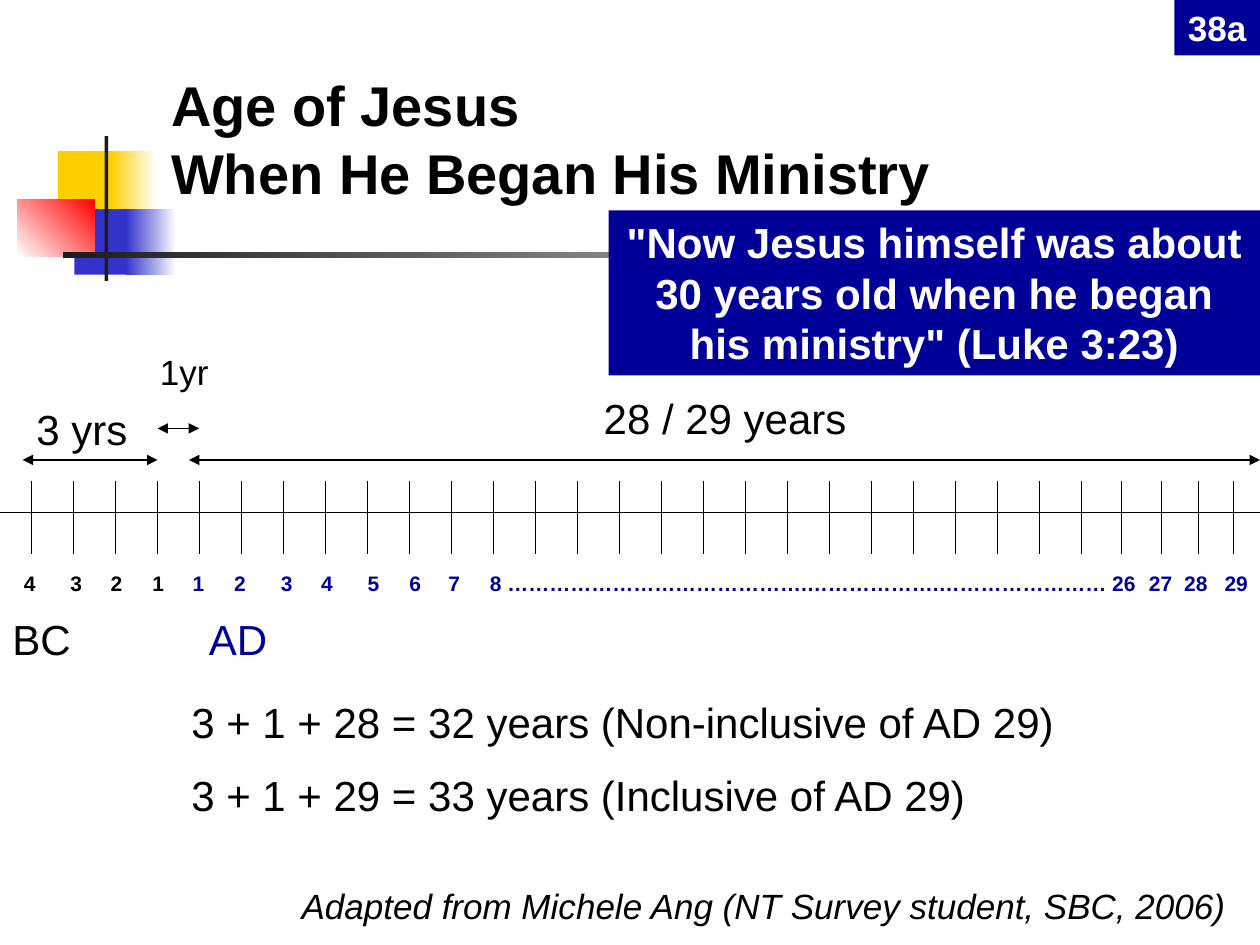
"""Build a timeline slide on the age of Jesus when he began his ministry."""
from lxml.etree import SubElement
from pptx import Presentation
from pptx.dml.color import RGBColor
from pptx.enum.shapes import MSO_CONNECTOR, MSO_SHAPE
from pptx.enum.text import MSO_ANCHOR, PP_ALIGN
from pptx.oxml.ns import qn
from pptx.util import Inches, Pt

BLACK = RGBColor(0x00, 0x00, 0x00)
WHITE = RGBColor(0xFF, 0xFF, 0xFF)
NAVY = RGBColor(0x00, 0x00, 0x99)
YELLOW = RGBColor(0xFF, 0xCF, 0x01)
BLUE = RGBColor(0x33, 0x33, 0xCC)
RED = RGBColor(0xFF, 0x00, 0x00)
CHARCOAL = RGBColor(0x1C, 0x1C, 0x1C)

ORNAMENTS = [
    ((0.46, 1.2, 0.48, 0.52), [YELLOW], 0),
    ((0.88, 1.2, 0.36, 0.52), [YELLOW, WHITE], 0),
    ((0.59, 1.66, 0.46, 0.52), [BLUE], 0),
    ((1, 1.66, 0.4, 0.52), [BLUE, WHITE], 0),
    ((0.14, 1.58, 0.61, 0.46), [WHITE, RED], 45),
    ((0.83, 1.08, 0.03, 1.15), [CHARCOAL], 0),
    ((0.5, 2, 9.5, 0.05), [CHARCOAL, WHITE], 0),
]

TICKS = [0.25 + index / 3 for index in range(26)] + [8.9, 9.22, 9.51, 9.79]
SPANS = [(1.25, 0.18, 3.65), (1.25, 1.58, 3.4), (10, 1.5, 3.65)]

BC_YEARS = "4\t3\t2\t1\t"
AD_YEARS = ("1\t2\t3\t4\t5\t6\t7\t8 "
            "…………………………………….……………….…………………… 26\t27\t28\t29")
YEAR_STOPS = [0.37, 0.69, 1.02, 1.34, 1.67, 2.04, 2.36, 2.73,
              3.06, 3.37, 3.7, 8.93, 9.21, 9.53]

LABELS = [
    ((0.19, 3.15, 0.98, 0.5), ["3 yrs"], 24, {}),
    ((1.17, 2.73, 0.75, 0.43), ["1yr"], 20, {}),
    ((1.58, 3.07, 8.35, 0.5), ["28 / 29 years"], 24, {"align": PP_ALIGN.CENTER}),
    ((1.42, 5.48, 7.25, 1.11),
     ["3 + 1 + 28 = 32 years (Non-inclusive of AD 29)",
      "3 + 1 + 29 = 33 years (Inclusive of AD 29)"], 24, {}),
    ((1.26, 0.68, 8.52, 1), ["Age of Jesus\vWhen He Began His Ministry"], 32,
     {"bold": True, "anchor": MSO_ANCHOR.BOTTOM}),
    ((0, 6.97, 9.83, 0.43),
     ["Adapted from Michele Ang (NT Survey student, SBC, 2006)"], 20,
     {"italic": True, "align": PP_ALIGN.RIGHT}),
]
TWO_TONE_LABELS = [
    ((0.09, 4.48, 9.91, 0.3), (BC_YEARS, AD_YEARS), 12, True, YEAR_STOPS),
    ((0, 4.82, 4.08, 0.5), ("BC\t", "AD"), 24, False, [1.56]),
]
PANELS = [
    ((4.83, 1.67, 5.17, 1.31),
     '"Now Jesus himself was about 30 years old when he began '
     'his ministry" (Luke 3:23)', 24),
    ((9.32, 0, 0.68, 0.44), "38a", 20),
]


def style_font(font, size, color, bold=False, italic=False):
    font.name, font.size = "Arial", Pt(size)
    font.bold, font.italic = bold, italic
    font.color.rgb = color


def add_block(slide, place, colors, angle=0):
    block = slide.shapes.add_shape(MSO_SHAPE.RECTANGLE, *map(Inches, place))
    block.shadow.inherit = False
    block.line.fill.background()
    if len(colors) == 1:
        block.fill.solid()
        block.fill.fore_color.rgb = colors[0]
    else:
        block.fill.gradient()
        block.fill.gradient_angle = angle
        for stop, color, position in zip(block.fill.gradient_stops, colors, (0, 1)):
            stop.color.rgb = color
            stop.position = position
    return block


def add_line(slide, start, end, arrows=False):
    line = slide.shapes.add_connector(
        MSO_CONNECTOR.STRAIGHT, *map(Inches, start + end))
    line.line.color.rgb = BLACK
    line.line.width = Pt(0.75)
    if arrows:
        outline = line.line._get_or_add_ln()
        for tag in ("a:headEnd", "a:tailEnd"):
            SubElement(outline, qn(tag), type="triangle")
    SubElement(line._element.spPr, qn("a:effectLst"))


def write(shape, paragraphs, size, color=BLACK, align=PP_ALIGN.LEFT,
          anchor=MSO_ANCHOR.TOP, bold=False, italic=False):
    frame = shape.text_frame
    frame.word_wrap = True
    frame.vertical_anchor = anchor
    frame.text = "\n".join(paragraphs)
    for index, para in enumerate(frame.paragraphs):
        para.alignment = align
        if index:
            para.space_before = Pt(13)
        for span in para.runs:
            style_font(span.font, size, color, bold, italic)


def add_two_tone(slide, place, parts, size, bold, stops):
    frame = slide.shapes.add_textbox(*map(Inches, place)).text_frame
    frame.word_wrap = True
    frame.margin_right = 0
    para = frame.paragraphs[0]
    tabs = SubElement(para._p.get_or_add_pPr(), qn("a:tabLst"))
    for stop in stops:
        SubElement(tabs, qn("a:tab"), pos=str(Inches(stop)), algn="l")
    for text, color in zip(parts, (BLACK, NAVY)):
        span = para.add_run()
        span.text = text
        style_font(span.font, size, color, bold)


def main():
    deck = Presentation()
    deck.slide_width, deck.slide_height = Inches(10), Inches(7.5)
    slide = deck.slides.add_slide(deck.slide_layouts[6])
    for place, colors, angle in ORNAMENTS:
        add_block(slide, place, colors, angle)
    add_line(slide, (0, 4.07), (10, 4.07))
    for left in TICKS:
        add_line(slide, (left, 3.82), (left, 4.4))
    for start, end, top in SPANS:
        add_line(slide, (start, top), (end, top), arrows=True)
    for label in TWO_TONE_LABELS:
        add_two_tone(slide, *label)
    for place, paragraphs, size, options in LABELS:
        box = slide.shapes.add_textbox(*map(Inches, place))
        write(box, paragraphs, size, **options)
    for place, text, size in PANELS:
        panel = add_block(slide, place, [NAVY])
        write(panel, [text], size, WHITE, PP_ALIGN.CENTER, bold=True)
    deck.save("out.pptx")


if __name__ == "__main__":
    main()
